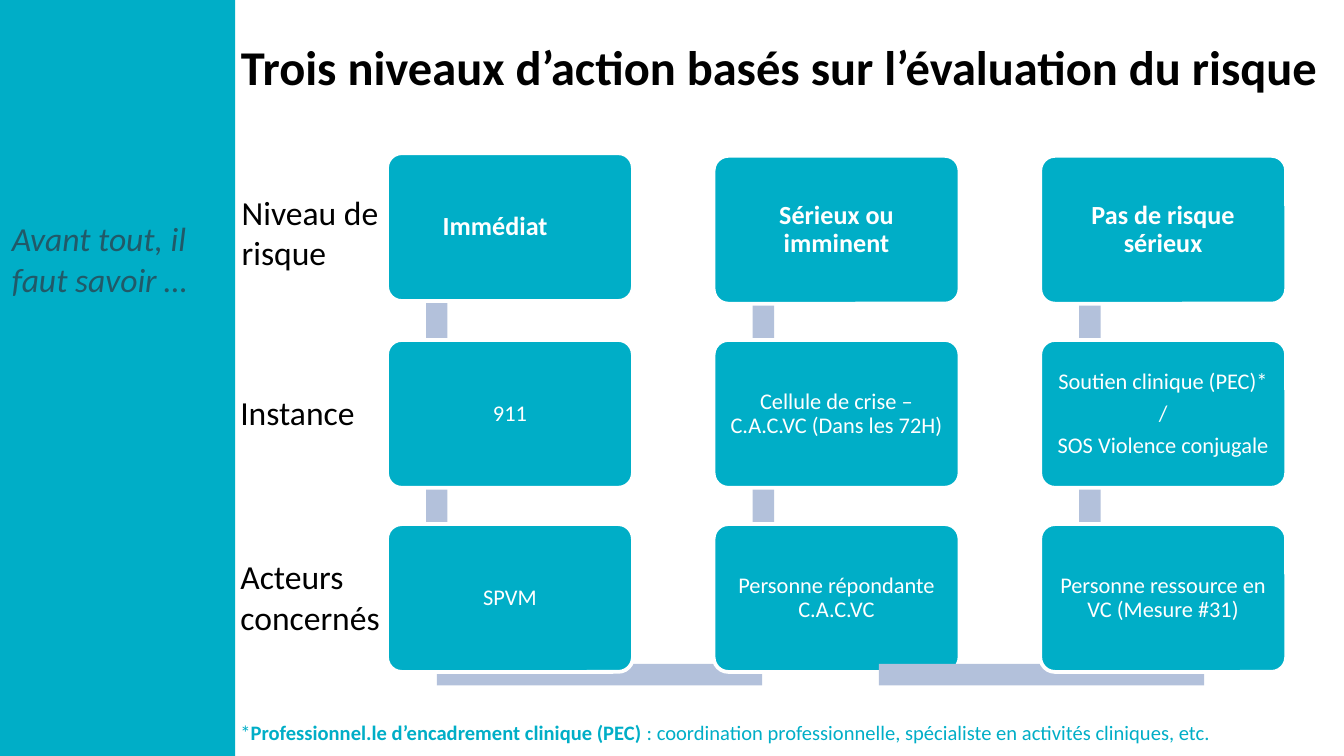
from pptx import Presentation
from pptx.dml.color import RGBColor as RGB
from pptx.enum.shapes import MSO_SHAPE as Kind
from pptx.enum.text import MSO_ANCHOR as Anchor, MSO_AUTO_SIZE as Fit, PP_ALIGN as Align
from pptx.util import Inches, Pt

WIDE = 10
HIGH = WIDE * 9 / 16
HUES = {"teal": "00AEC7", "bar": "B3C1DB", "white": "FFFFFF",
        "black": "000000", "deep": "215968"}
LEFT, TOP = 2.88, 1.16
STEP_X, STEP_Y = 2.43, 1.37
CARD_W, CARD_H = 1.83, 1.1
BAR = 0.16
PAD = 0.05
COLS = [
    ("Immédiat", "911", "SPVM"),
    ("Sérieux ou imminent", "Cellule de crise – C.A.C.VC (Dans les 72H)",
     "Personne répondante C.A.C.VC"),
    ("Pas de risque sérieux", "Soutien clinique (PEC)*\n/\nSOS Violence conjugale",
     "Personne ressource en VC (Mesure #31)"),
]
LABELS = [
    ("Niveau de risque", (1.7, 1.38, 1.75, 0.71)),
    ("Instance", (1.69, 2.87, 1.1, 0.4)),
    ("Acteurs concernés", (1.69, 4.09, 1.29, 0.71)),
]


def hue(name):
    return RGB.from_string(HUES[name])


def inch(box):
    return [Inches(part) for part in box]


def write(shape, text, size=18, color="black", bold=False, italic=False,
          align=Align.LEFT, anchor=Anchor.TOP, pads=None, line=None, after=None):
    frame = shape.text_frame
    frame.word_wrap = True
    frame.auto_size = Fit.NONE
    frame.vertical_anchor = anchor
    if pads:
        (frame.margin_left, frame.margin_top,
         frame.margin_right, frame.margin_bottom) = inch(pads)
    parts = [[(row, bold)] for row in text.split("\n")] if isinstance(text, str) else [text]
    for i, runs in enumerate(parts):
        para = frame.add_paragraph() if i else frame.paragraphs[0]
        para.alignment = align
        if line:
            para.line_spacing = line
        if after and i < len(parts) - 1:
            para.space_after = Pt(after)
        for words, heavy in runs:
            run = para.add_run()
            run.text = words
            font = run.font
            font.name, font.size = "Calibri", Pt(size)
            font.bold, font.italic = heavy, italic
            font.color.rgb = hue(color)


def note(slide, box, text, **style):
    write(slide.shapes.add_textbox(*inch(box)), text, **style)


def block(slide, box, fill, kind=Kind.RECTANGLE):
    shape = slide.shapes.add_shape(kind, *inch(box))
    shape.shadow.inherit = False
    shape.fill.solid()
    shape.fill.fore_color.rgb = hue(fill)
    shape.line.fill.background()
    return shape


def card(slide, box, text, head=False, shift=0):
    shape = block(slide, box, "teal", Kind.ROUNDED_RECTANGLE)
    shape.adjustments[0] = 0.1
    shape.line.color.rgb = hue("white")
    shape.line.width = Pt(2)
    write(shape, text, size=14 if head else 12, color="white", bold=head,
          align=Align.CENTER, anchor=Anchor.MIDDLE,
          pads=(PAD, PAD, PAD + shift, PAD), line=0.9, after=4.2)


def column(slide, x, y, texts, lift=0, shift=0):
    for row in range(len(texts) - 1):
        block(slide, (x + 0.29, y + row * STEP_Y + 0.27, BAR, 1.36), "bar")
    for row, text in enumerate(texts):
        top = y + row * STEP_Y
        head = row == 0
        card(slide, (x, top - lift if head else top, CARD_W, CARD_H), text,
             head, shift if head else 0)


def grid(slide, x, y):
    foot = y + 2 * STEP_Y + CARD_H - 0.06
    block(slide, (x + 0.37, foot, 2.42, BAR), "bar")
    column(slide, x, y, COLS[0], lift=0.02, shift=0.22)
    column(slide, x + STEP_X, y, COLS[1])
    block(slide, (x + 3.66, foot, 2.42, BAR), "bar")
    column(slide, x + 2 * STEP_X, y, COLS[2])


def heading(slide, box):
    title = slide.shapes.title
    title.left, title.top, title.width, title.height = inch(box)
    write(title, "Trois niveaux d’action basés sur l’évaluation du risque ",
          size=26, bold=True, align=Align.CENTER, anchor=Anchor.MIDDLE)


def side(slide, box):
    x, y, wide, high = box
    block(slide, box, "teal")
    note(slide, (x - 0.01, y + high * 0.28, wide - 0.06, 0.71),
         "Avant tout, il faut savoir …", color="deep", italic=True)


def footer(slide, box):
    note(slide, box, [
        ("*", False),
        ("Professionnel.le d’encadrement clinique (PEC) ", True),
        (": coordination professionnelle, spécialiste en activités cliniques, etc.", False),
    ], size=11, color="teal")


def main():
    deck = Presentation()
    deck.slide_width, deck.slide_height = Inches(WIDE), Inches(HIGH)
    slide = deck.slides.add_slide(deck.slide_layouts[5])
    heading(slide, (1.69, 0.07, 8.31, 0.84))
    side(slide, (0, 0, 1.75, HIGH))
    grid(slide, LEFT, TOP)
    for text, box in LABELS:
        note(slide, box, text)
    footer(slide, (1.69, 5.31, 8.19, 0.29))
    deck.save("out.pptx")


if __name__ == "__main__":
    main()
